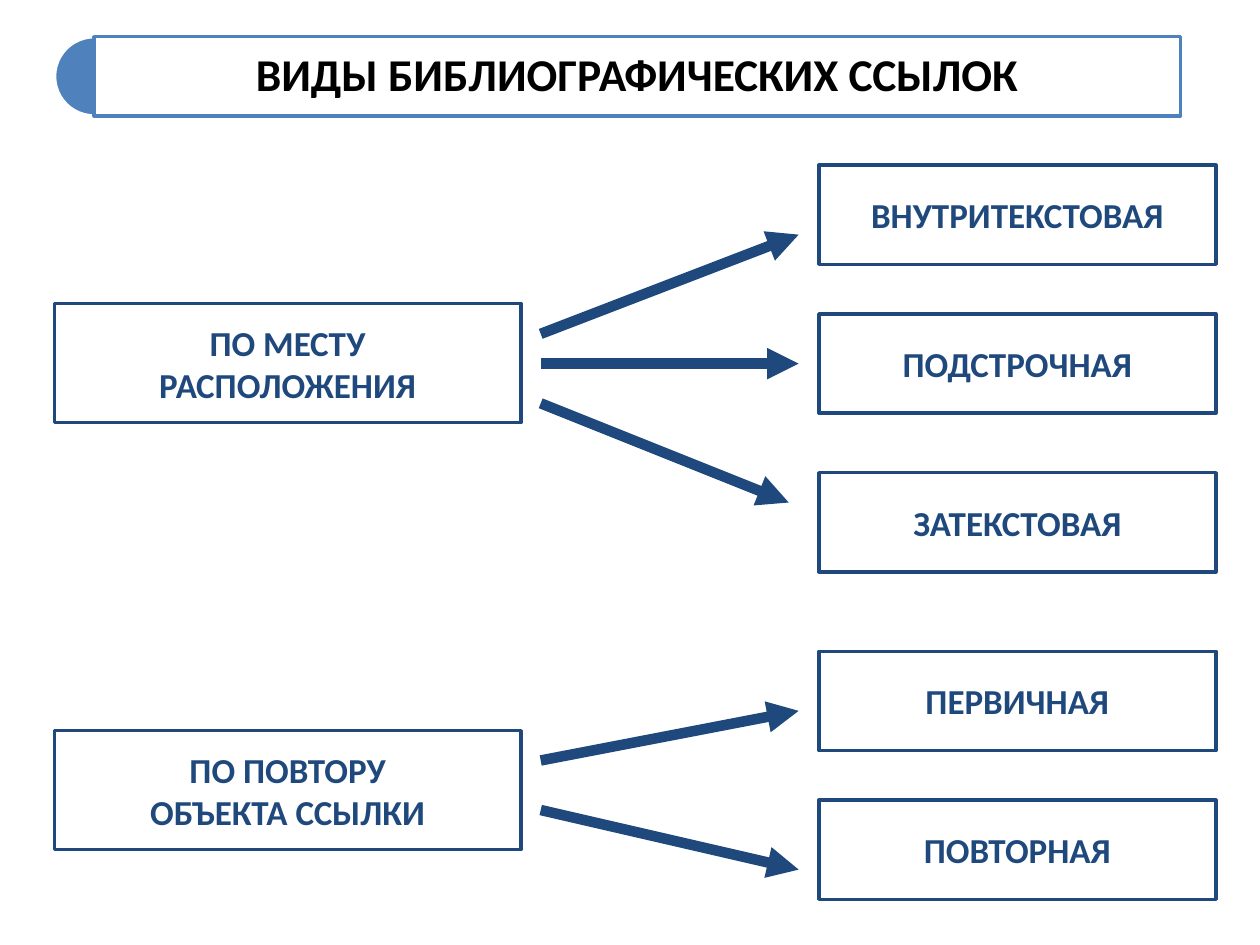
"""Build a slide that sorts bibliographic references by place and by repetition."""
from lxml import etree
from pptx import Presentation
from pptx import util as u
from pptx.dml.color import RGBColor
from pptx.enum import shapes, text
from pptx.oxml.ns import qn

NAVY = RGBColor(0x1F, 0x49, 0x7D)
BLUE = RGBColor(0x4F, 0x81, 0xBD)
WHITE = RGBColor(0xFF, 0xFF, 0xFF)
BLACK = RGBColor(0, 0, 0)


def paint(item, fill, edge):
    item.fill.solid()
    item.fill.fore_color.rgb = fill
    item.line.color.rgb = edge
    item.line.width = u.Pt(2)


def write(item, lines, size, color, frame):
    box = item.text_frame
    box.text = "\n".join(lines)
    for key, val in frame.items():
        setattr(box, key, val)
    font = {"name": "Calibri", "size": u.Pt(size), "bold": True}
    for para in box.paragraphs:
        para.alignment = text.PP_ALIGN.CENTER
        for run in para.runs:
            for key, val in font.items():
                setattr(run.font, key, val)
            run.font.color.rgb = color


deck = Presentation()
deck.slide_width, deck.slide_height = u.Cm(25.4), u.Cm(19.05)
slide = deck.slides.add_slide(deck.slide_layouts[5])
parts = slide.shapes

cap = parts.add_shape(shapes.MSO_SHAPE.PIE, u.Cm(1.1), u.Cm(0.74), u.Cm(1.6), u.Cm(1.6))
cap.shadow.inherit = False
cap.adjustments[0], cap.adjustments[1] = 54, 162
paint(cap, BLUE, WHITE)

title = parts.title
place = {"left": 1.9, "top": 0.74, "width": 21.9, "height": 1.6}
for key, val in place.items():
    setattr(title, key, u.Cm(val))
paint(title, WHITE, BLUE)
pad = u.Cm(0.28)
write(title, ["ВИДЫ БИБЛИОГРАФИЧЕСКИХ ССЫЛОК"], 26, BLACK, {
    "word_wrap": True, "auto_size": text.MSO_AUTO_SIZE.NONE,
    "vertical_anchor": text.MSO_ANCHOR.MIDDLE,
    "margin_left": pad, "margin_right": pad,
    "margin_top": pad, "margin_bottom": pad})
title.text_frame.paragraphs[0].line_spacing = 0.9
cap._element.addnext(title._element)

left, right = (1.1, 9.4, 2.4), (16.51, 8, 2)
boxes = [
    (left, 6.12, ["ПО МЕСТУ", "РАСПОЛОЖЕНИЯ"]),
    (left, 14.73, ["ПО ПОВТОРУ", "ОБЪЕКТА ССЫЛКИ"]),
    (right, 3.33, ["ВНУТРИТЕКСТОВАЯ"]),
    (right, 6.33, ["ПОДСТРОЧНАЯ"]),
    (right, 9.53, ["ЗАТЕКСТОВАЯ"]),
    (right, 13.13, ["ПЕРВИЧНАЯ"]),
    (right, 16.13, ["ПОВТОРНАЯ"]),
]
for (x, wide, high), y, lines in boxes:
    box = parts.add_shape(shapes.MSO_SHAPE.RECTANGLE,
                          u.Cm(x), u.Cm(y), u.Cm(wide), u.Cm(high))
    box.shadow.inherit = False
    paint(box, WHITE, NAVY)
    write(box, lines, 20, NAVY, {
        "word_wrap": False, "vertical_anchor": text.MSO_ANCHOR.MIDDLE})

arrows = [(6.73, 16.1, 4.73), (7.33, 16.1, 7.33), (8.13, 15.9, 10.13),
          (15.33, 16.1, 14.33), (16.33, 16.1, 17.53)]
for start, tip, end in arrows:
    arrow = parts.add_connector(shapes.MSO_CONNECTOR.STRAIGHT,
                                u.Cm(10.9), u.Cm(start), u.Cm(tip), u.Cm(end))
    arrow.line.color.rgb = NAVY
    arrow.line.width = u.Pt(6)
    etree.SubElement(arrow.line._get_or_add_ln(), qn("a:tailEnd"), type="triangle")
    etree.SubElement(arrow._element.spPr, qn("a:effectLst"))

deck.save("out.pptx")
